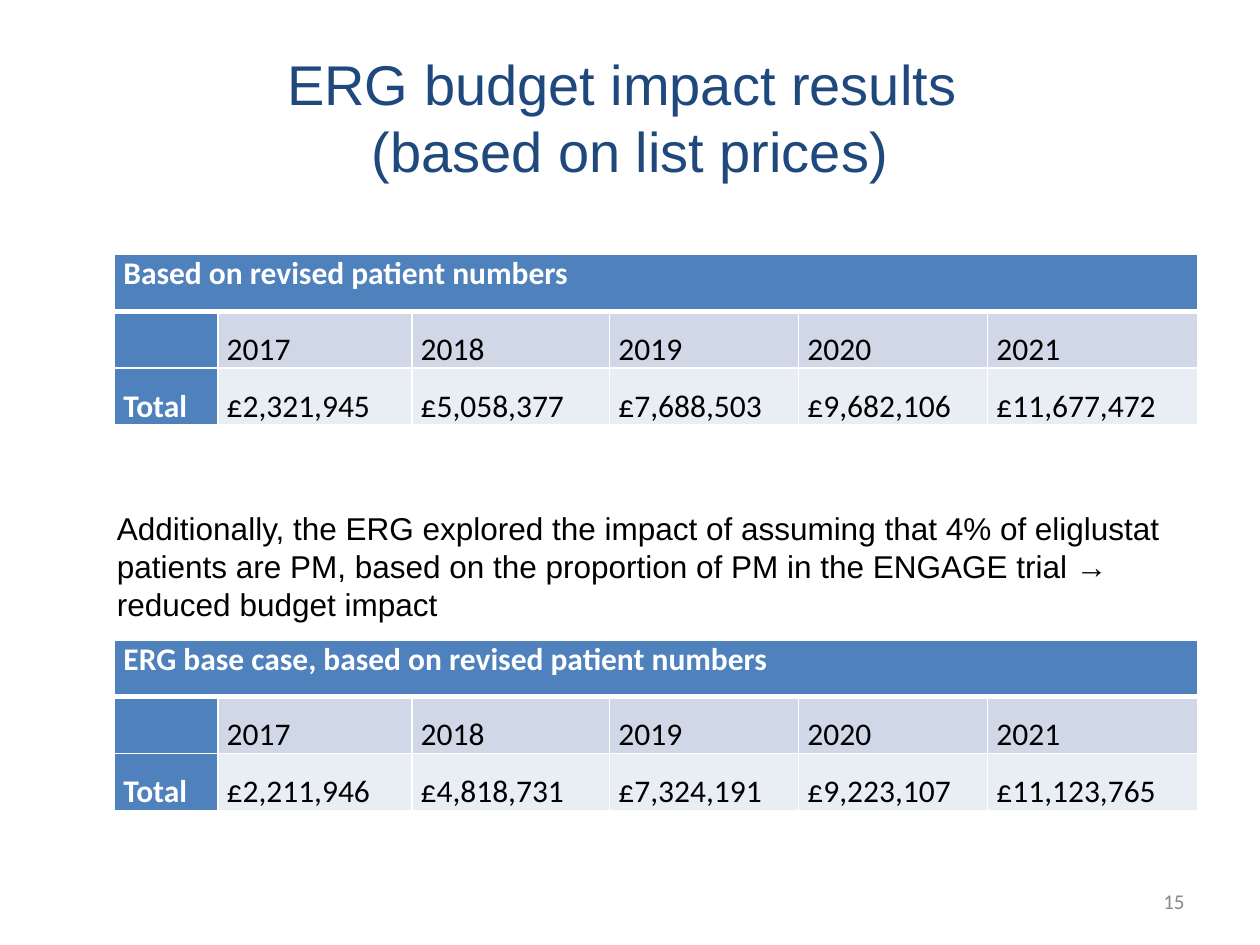
from dataclasses import dataclass

from lxml.etree import SubElement
from pptx import Presentation
from pptx.dml.color import RGBColor as RGB
from pptx.enum.text import MSO_ANCHOR as Anchor, PP_ALIGN as Align
from pptx.oxml.ns import qn
from pptx.util import Inches, Pt


@dataclass(frozen=True)
class Theme:
    """Colours, fonts and type sizes of the slide."""
    title: str = "1F497D"
    text: str = "000000"
    number: str = "898989"
    white: str = "FFFFFF"
    header: str = "4F81BD"
    bands: tuple = ("D0D8E8", "E9EDF4")
    sans: str = "Arial"
    table_font: str = "Calibri"
    title_size: int = 32
    body_size: int = 18
    number_size: int = 12


T = Theme()
COLUMNS = (0.82, 1.54, 1.57, 1.5, 1.5, 1.67)
YEARS = ("2017", "2018", "2019", "2020", "2021")
REVISED = ("£2,321,945", "£5,058,377", "£7,688,503", "£9,682,106", "£11,677,472")
BASE_CASE = ("£2,211,946", "£4,818,731", "£7,324,191", "£9,223,107", "£11,123,765")


def add_run(p, text, size, font, color, bold=False):
    """Add one formatted run to a paragraph."""
    r = p.add_run()
    r.text = text
    r.font.size, r.font.name, r.font.bold = Pt(size), font, bold
    r.font.color.rgb = RGB.from_string(color)


def set_borders(cell, bottom):
    """Draw white cell borders with the given bottom width in points."""
    tc_pr = cell._tc.get_or_add_tcPr()
    sides = (("a:lnL", 1), ("a:lnR", 1), ("a:lnT", 1), ("a:lnB", bottom))
    for i, (tag, width) in enumerate(sides):
        ln = SubElement(tc_pr, qn(tag), w=str(Pt(width)))
        fill = SubElement(ln, qn("a:solidFill"))
        SubElement(fill, qn("a:srgbClr"), val=T.white)
        tc_pr.insert(i, ln)


def add_title(s, box, lines):
    """Place the centred title in its placeholder."""
    title = s.shapes.title
    title.left, title.top, title.width, title.height = map(Inches, box)
    tf = title.text_frame
    tf.vertical_anchor = Anchor.MIDDLE
    p = tf.paragraphs[0]
    p.alignment = Align.CENTER
    for i, line in enumerate(lines):
        if i:
            p.add_line_break()
        add_run(p, line, T.title_size, T.sans, T.title)


def add_text(s, box, text, size, font, color, align=Align.LEFT, anchor=Anchor.TOP):
    """Place a wrapping text box."""
    tf = s.shapes.add_textbox(*map(Inches, box)).text_frame
    tf.word_wrap = True
    tf.vertical_anchor = anchor
    p = tf.paragraphs[0]
    p.alignment = align
    add_run(p, text, size, font, color)


def add_budget_table(s, box, heading, totals):
    """Place a table of yearly totals under a merged heading."""
    rows = ((heading,) + ("",) * len(YEARS), ("",) + YEARS, ("Total",) + totals)
    table = s.shapes.add_table(len(rows), len(COLUMNS), *map(Inches, box)).table
    for column, width in zip(table.columns, COLUMNS):
        column.width = Inches(width)
    for i, values in enumerate(rows):
        for j, value in enumerate(values):
            cell = table.cell(i, j)
            is_head = i == 0 or j == 0
            cell.margin_left = cell.margin_right = Inches(0.07)
            cell.margin_top = cell.margin_bottom = 0
            cell.fill.solid()
            cell.fill.fore_color.rgb = RGB.from_string(
                T.header if is_head else T.bands[i - 1])
            set_borders(cell, 1 if i else 3)
            p = cell.text_frame.paragraphs[0]
            if i:
                p.line_spacing = 1.5
            if value:
                add_run(p, value, T.body_size, T.table_font,
                        T.white if is_head else T.text, is_head)
    table.cell(0, 0).merge(table.cell(0, len(YEARS)))


def main():
    """Build and save the slide."""
    prs = Presentation()
    prs.slide_width, prs.slide_height = Inches(10), Inches(7.5)
    s = prs.slides.add_slide(prs.slide_layouts[5])
    add_title(s, (0.5, 0.3, 9, 1.25),
              ("ERG budget impact results ", "(based on list prices)"))
    add_text(s, (7.17, 6.95, 2.33, 0.4), "15", T.number_size, T.table_font,
             T.number, Align.RIGHT, Anchor.MIDDLE)
    add_budget_table(s, (0.91, 2.02, 8.59, 1.35),
                     "Based on revised patient numbers", REVISED)
    add_budget_table(s, (0.91, 5.08, 8.59, 1.35),
                     "ERG base case, based on revised patient numbers", BASE_CASE)
    add_text(s, (0.83, 3.99, 8.52, 1.31),
             "Additionally, the ERG explored the impact of assuming that 4% of "
             "eliglustat patients are PM, based on the proportion of PM in the "
             "ENGAGE trial → reduced budget impact",
             T.body_size, T.sans, T.text)
    prs.save("out.pptx")


if __name__ == "__main__":
    main()
